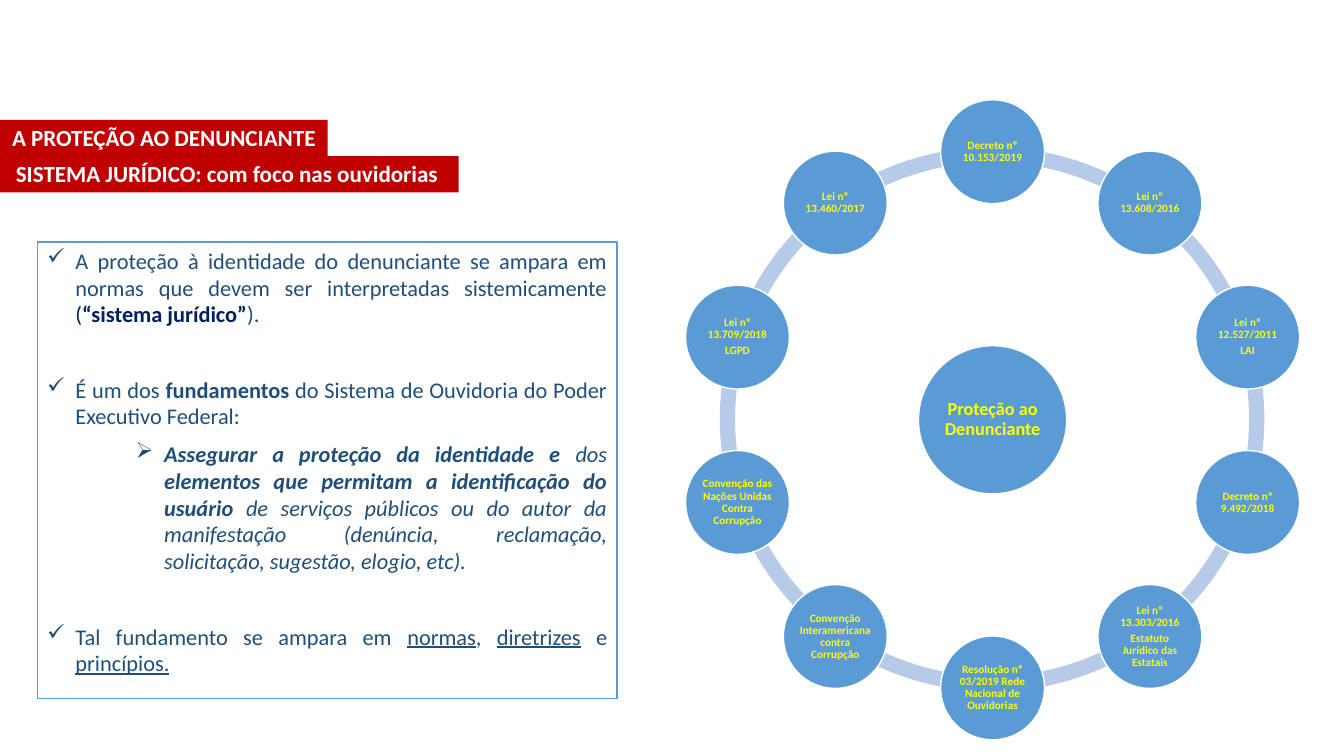
from dataclasses import dataclass
from math import cos, radians, sin

from lxml import etree
from pptx import Presentation
from pptx.dml.color import RGBColor
from pptx.enum.shapes import MSO_SHAPE
from pptx.enum.text import MSO_ANCHOR, PP_ALIGN
from pptx.oxml.ns import qn
from pptx.shapes.autoshape import Shape
from pptx.util import Pt

PX = 9144  # EMU in one px, 100 px to the inch
FONT = "Calibri"

RED = RGBColor(0xC0, 0x00, 0x00)
WHITE = RGBColor(0xFF, 0xFF, 0xFF)
YELLOW = RGBColor(0xFF, 0xFF, 0x00)
BLUE = RGBColor(0x5B, 0x9B, 0xD5)
PALE_BLUE = RGBColor(0xB5, 0xCB, 0xE7)
DARK_BLUE = RGBColor(0x1F, 0x4E, 0x79)
NAVY = RGBColor(0x00, 0x20, 0x60)

RECTANGLE, OVAL, ARC = MSO_SHAPE.RECTANGLE, MSO_SHAPE.OVAL, MSO_SHAPE.BLOCK_ARC
CENTER, JUSTIFY = PP_ALIGN.CENTER, PP_ALIGN.JUSTIFY
TOP, MIDDLE, BOTTOM = MSO_ANCHOR.TOP, MSO_ANCHOR.MIDDLE, MSO_ANCHOR.BOTTOM


@dataclass(frozen=True)
class Run:
    text: str
    bold: bool = False
    italic: bool = False
    underline: bool = False
    color: RGBColor | None = None


@dataclass(frozen=True)
class Paragraph:
    runs: tuple[Run, ...]
    bullet: str = ""
    indent: int = 0
    level: int = 0
    before: float = 0


@dataclass(frozen=True)
class Banner:
    text: str
    top: int
    width: int


BANNERS = (
    Banner("A PROTEÇÃO AO DENUNCIANTE", 119, 325),
    Banner("SISTEMA JURÍDICO: com foco nas ouvidorias ", 155, 455),
)

# Clockwise from the top
NORMS = (
    ("Decreto nº 10.153/2019",),
    ("Lei nº 13.608/2016",),
    ("Lei nº 12.527/2011", "LAI"),
    ("Decreto nº 9.492/2018",),
    ("Lei nº 13.303/2016", "Estatuto Jurídico das Estatais"),
    ("Resolução nº 03/2019 Rede Nacional de Ouvidorias",),
    ("Convenção Interamericana contra Corrupção",),
    ("Convenção das Nações Unidas Contra Corrupção",),
    ("Lei nº 13.709/2018", "LGPD"),
    ("Lei nº 13.460/2017",),
)

CHECK, ARROW = "✓", "➢"
HANGING = 28
TOPIC_GAP = 34.5
ARGUMENTS = (
    Paragraph((
        Run("A proteção à identidade do denunciante se ampara em normas que "
            "devem ser interpretadas sistemicamente "),
        Run("(", color=NAVY),
        Run("“sistema jurídico”", bold=True, color=NAVY),
        Run(")."),
    ), CHECK, HANGING),
    Paragraph((
        Run("É um dos "),
        Run("fundamentos", bold=True),
        Run(" do Sistema de Ouvidoria do Poder Executivo Federal:"),
    ), CHECK, HANGING, before=TOPIC_GAP),
    Paragraph((
        Run("Assegurar a proteção da identidade e", bold=True, italic=True),
        Run(" dos ", italic=True),
        Run("elementos que permitam a identificação do usuário", bold=True, italic=True),
        Run(" de serviços públicos ou do autor da manifestação (denúncia, "
            "reclamação, solicitação, sugestão, elogio, etc).", italic=True),
    ), ARROW, 116, level=2, before=7.5),
    Paragraph((
        Run("Tal fundamento se ampara em "),
        Run("normas", underline=True),
        Run(", "),
        Run("diretrizes", underline=True),
        Run(" e "),
        Run("princípios.", underline=True),
    ), CHECK, HANGING, before=TOPIC_GAP),
)

presentation = Presentation()
presentation.slide_width, presentation.slide_height = 1333 * PX, 750 * PX
slide = presentation.slides.add_slide(presentation.slide_layouts[6])


def add_figure(kind: MSO_SHAPE, left: int, top: int, width: int, height: int,
               fill: RGBColor, line: RGBColor | None = None) -> Shape:
    figure = slide.shapes.add_shape(kind, left * PX, top * PX, width * PX, height * PX)
    figure.shadow.inherit = False
    figure.fill.solid()
    figure.fill.fore_color.rgb = fill
    if line is None:
        figure.line.fill.background()
    else:
        figure.line.color.rgb = line
        figure.line.width = Pt(1)
    return figure


def write(figure: Shape, paragraphs: tuple[Paragraph, ...], *, size: float,
          color: RGBColor, align: PP_ALIGN = CENTER, anchor: MSO_ANCHOR = MIDDLE,
          wrap: bool = True, inset: tuple[int, int] = (10, 5),
          line_spacing: float = 1.0, after: float = 0) -> None:
    frame = figure.text_frame
    frame.word_wrap = wrap
    frame.vertical_anchor = anchor
    frame.margin_left = frame.margin_right = inset[0] * PX
    frame.margin_top = frame.margin_bottom = inset[1] * PX
    for index, content in enumerate(paragraphs):
        paragraph = frame.paragraphs[0] if index == 0 else frame.add_paragraph()
        paragraph.alignment = align
        paragraph.level = content.level
        paragraph.line_spacing = line_spacing
        paragraph.space_before = Pt(content.before)
        paragraph.space_after = Pt(after)
        if content.bullet:
            properties = paragraph._p.get_or_add_pPr()
            properties.set("marL", str(content.indent * PX))
            properties.set("indent", str(-HANGING * PX))
            etree.SubElement(properties, qn("a:buChar")).set("char", content.bullet)
        for part in content.runs:
            run = paragraph.add_run()
            run.text = part.text
            font = run.font
            font.name, font.size = FONT, Pt(size)
            font.bold, font.italic, font.underline = part.bold, part.italic, part.underline
            font.color.rgb = part.color or color


def bold_lines(*lines: str) -> tuple[Paragraph, ...]:
    return tuple(Paragraph((Run(line, bold=True),)) for line in lines)


def add_node(x: int, y: int, diameter: int, lines: tuple[str, ...],
             size: float, inset: int) -> None:
    node = add_figure(OVAL, x - diameter // 2, y - diameter // 2,
                      diameter, diameter, BLUE, WHITE)
    write(node, bold_lines(*lines), size=size, color=YELLOW, inset=(inset, inset),
          line_spacing=0.9, after=round(size * 0.35, 1))


# Title banners
for banner in BANNERS:
    bar = add_figure(RECTANGLE, 0, banner.top, banner.width, 36, RED)
    write(bar, bold_lines(banner.text), size=16.5, color=WHITE, anchor=BOTTOM, wrap=False)

# Ring of arcs between the norms
CENTER_X, CENTER_Y = 984, 416
RING, ORBIT = 540, 266
STEP = 360 / len(NORMS)
angles = [STEP * place - 90 for place in range(len(NORMS))]
for angle in angles:
    arc = add_figure(ARC, CENTER_X - RING // 2, CENTER_Y - RING // 2, RING, RING, PALE_BLUE)
    arc.adjustments[0] = angle % 360 * 0.6  # 60000ths of a degree over 100000
    arc.adjustments[1] = (angle + STEP) % 360 * 0.6
    arc.adjustments[2] = 0.028

# Hub and norms
add_node(CENTER_X, CENTER_Y, 147, ("Proteção ao Denunciante",), 13, 2)
for angle, norm in zip(angles, NORMS):
    add_node(round(CENTER_X + ORBIT * cos(radians(angle))),
             round(CENTER_Y + ORBIT * sin(radians(angle))), 103, norm, 8, 1)

# Arguments box
arguments_box = add_figure(RECTANGLE, 37, 240, 575, 453, WHITE, BLUE)
write(arguments_box, ARGUMENTS, size=16, color=DARK_BLUE, align=JUSTIFY, anchor=TOP)

presentation.save("out.pptx")
